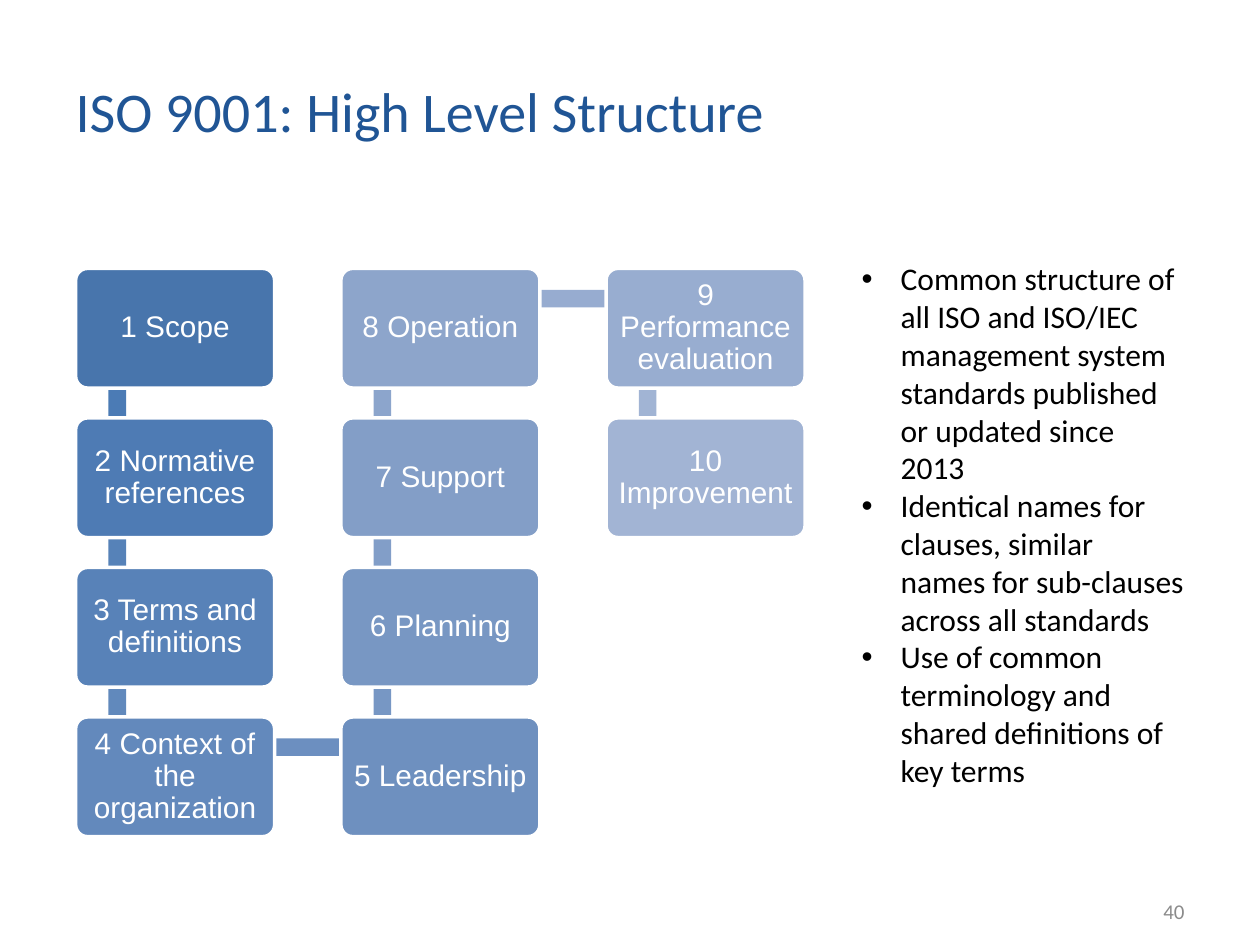
"""Builds the ISO 9001 high level structure slide with its snaking chain of clauses."""
import math

import pptx
import pptx.dml.color
import pptx.enum.shapes
import pptx.enum.text
import pptx.oxml
import pptx.oxml.ns
import pptx.util

Inches = pptx.util.Inches
ANCHOR = pptx.enum.text.MSO_ANCHOR
ALIGN = pptx.enum.text.PP_ALIGN
SHAPE = pptx.enum.shapes.MSO_SHAPE

TITLE = "ISO 9001: High Level Structure"
PAGE = "40"
CLAUSES = [
    ("1 Scope", "4875AC", "4B7BB5"),
    ("2 Normative references", "4E7BB4", "5682B8"),
    ("3 Terms and definitions", "5882B8", "6189BC"),
    ("4 Context of the organization", "6389BC", "6C8FC0"),
    ("5 Leadership", "6E90BF", "7797C4"),
    ("6 Planning", "7897C3", "829EC8"),
    ("7 Support", "839EC7", "8CA5CC"),
    ("8 Operation", "8DA5CB", "97ACD0"),
    ("9 Performance evaluation", "98ADD0", "A1B4D4"),
    ("10 Improvement", "A2B4D4", None),
]
POINTS = [
    "Common structure of all ISO and ISO/IEC management system standards published or updated since 2013",
    "Identical names for clauses, similar names for sub-clauses across all standards",
    "Use of common terminology and shared definitions of key terms",
]
THEME = {
    "title": ("Calibri", 32, "205595"),
    "point": ("Calibri", 18, "000000"),
    "page": ("Calibri", 12, "8B8B8B"),
    "clause": ("Arial", 17, "FFFFFF"),
    "outline": "FFFFFF",
}

ROWS = 4
GRID_LEFT, GRID_TOP = 0.6, 2.13
COLUMN_STEP, ROW_STEP = 4.21 / 2, 3.56 / 3
BOX_WIDTH, BOX_HEIGHT = 1.58, 0.95
LINK_X, LINK_Y, LINK_THICKNESS, LINK_TRIM = 0.33, 0.24, 0.14, 0.02
INDENT = 0.31


def rgb(code):
    return pptx.dml.color.RGBColor.from_string(code)


def add_run(paragraph, wording, style):
    run = paragraph.add_run()
    run.text = wording
    name, size, color = THEME[style]
    run.font.name = name
    run.font.size = pptx.util.Pt(size)
    run.font.color.rgb = rgb(color)


def add_textbox(slide, left, top, width, height):
    frame = slide.shapes.add_textbox(*map(Inches, (left, top, width, height))).text_frame
    frame.word_wrap = True
    return frame


def add_block(slide, preset, left, top, width, height, color):
    block = slide.shapes.add_shape(preset, *map(Inches, (left, top, width, height)))
    block.shadow.inherit = False
    block.fill.solid()
    block.fill.fore_color.rgb = rgb(color)
    block.line.fill.background()
    return block


def clause_corner(index):
    column, step = divmod(index, ROWS)
    row = ROWS - 1 - step if column % 2 else step
    return GRID_LEFT + column * COLUMN_STEP, GRID_TOP + row * ROW_STEP


def add_link(slide, index, color):
    (x1, y1), (x2, y2) = clause_corner(index), clause_corner(index + 1)
    length = math.hypot(x2 - x1, y2 - y1) - LINK_TRIM
    center_x, center_y = (x1 + x2) / 2 + LINK_X, (y1 + y2) / 2 + LINK_Y
    link = add_block(slide, SHAPE.RECTANGLE, center_x - length / 2,
                     center_y - LINK_THICKNESS / 2, length, LINK_THICKNESS, color)
    link.rotation = math.degrees(math.atan2(y2 - y1, x2 - x1)) % 360


def add_clause(slide, index, wording, color):
    left, top = clause_corner(index)
    box = add_block(slide, SHAPE.ROUNDED_RECTANGLE, left, top, BOX_WIDTH, BOX_HEIGHT, color)
    box.adjustments[0] = 0.1
    box.line.color.rgb = rgb(THEME["outline"])
    box.line.width = pptx.util.Pt(2)
    frame = box.text_frame
    frame.word_wrap = True
    frame.vertical_anchor = ANCHOR.MIDDLE
    frame.margin_left = frame.margin_right = Inches(0.07)
    frame.margin_top = frame.margin_bottom = Inches(0.07)
    paragraph = frame.paragraphs[0]
    paragraph.alignment = ALIGN.CENTER
    paragraph.line_spacing = 0.9
    add_run(paragraph, wording, "clause")


def add_bullet(paragraph):
    properties = paragraph._p.get_or_add_pPr()
    properties.set("marL", str(Inches(INDENT)))
    properties.set("indent", str(-Inches(INDENT)))
    namespace = pptx.oxml.ns.nsdecls("a")
    for element in (f'<a:buFont {namespace} typeface="Arial"/>',
                    f'<a:buChar {namespace} char="•"/>'):
        properties.append(pptx.oxml.parse_xml(element))


def add_title(slide):
    title = slide.shapes.title
    title.left, title.top, title.width, title.height = map(Inches, (0.5, 0.3, 8.04, 1.15))
    title.text_frame.vertical_anchor = ANCHOR.MIDDLE
    paragraph = title.text_frame.paragraphs[0]
    paragraph.alignment = ALIGN.LEFT
    add_run(paragraph, TITLE, "title")


def add_points(slide):
    frame = add_textbox(slide, 6.74, 2.01, 2.76, 4.91)
    for index, wording in enumerate(POINTS):
        paragraph = frame.add_paragraph() if index else frame.paragraphs[0]
        add_bullet(paragraph)
        add_run(paragraph, wording, "point")


def add_page_number(slide):
    frame = add_textbox(slide, 7.17, 7.03, 2.33, 0.4)
    frame.vertical_anchor = ANCHOR.MIDDLE
    frame.paragraphs[0].alignment = ALIGN.RIGHT
    add_run(frame.paragraphs[0], PAGE, "page")


def main():
    deck = pptx.Presentation()
    deck.slide_width, deck.slide_height = Inches(10), Inches(7.5)
    slide = deck.slides.add_slide(deck.slide_layouts.get_by_name("Title Only"))
    add_title(slide)
    add_points(slide)
    add_page_number(slide)
    for index, (wording, box_color, link_color) in enumerate(CLAUSES):
        if link_color:
            add_link(slide, index, link_color)
        add_clause(slide, index, wording, box_color)
    deck.save("out.pptx")


if __name__ == "__main__":
    main()
